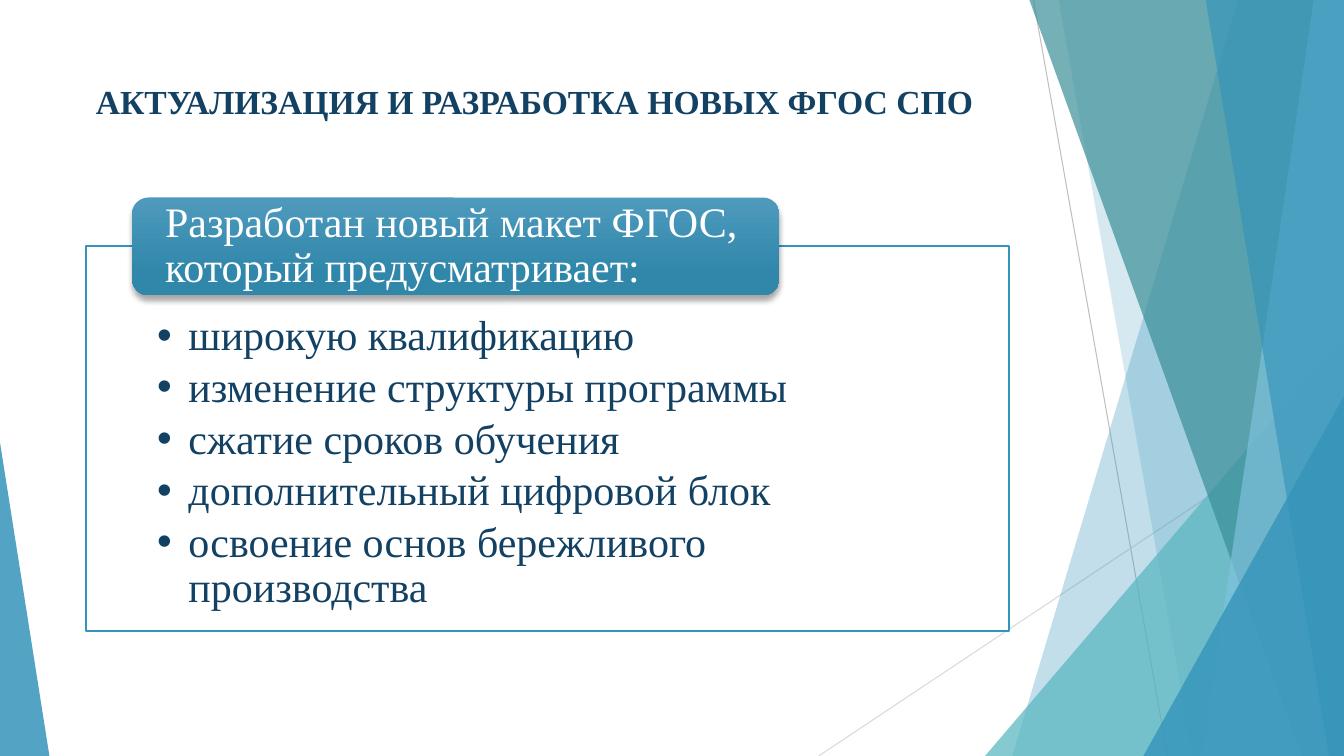
from lxml.etree import SubElement
from pptx import Presentation
from pptx.dml.color import RGBColor
from pptx.enum.shapes import MSO_CONNECTOR, MSO_SHAPE
from pptx.enum.text import MSO_ANCHOR, MSO_AUTO_SIZE, PP_ALIGN
from pptx.oxml.ns import qn
from pptx.util import Pt

PX = 9144  # EMU; 100 px to the inch
W, H = 1333, 750
FONT = "Times New Roman"
COLORS = {
    "navy": "134163", "white": "FFFFFF", "black": "000000",
    "blue": "3494BA", "sky": "7FC1DB", "aqua": "58B6C0", "teal": "3A8F98",
    "gray": "BFBFBF", "pale": "D9D9D9", "top": "4E9ABD", "bottom": "3087AA",
}

TITLE = "АКТУАЛИЗАЦИЯ И РАЗРАБОТКА НОВЫХ ФГОС СПО"
HEADER = "Разработан новый макет ФГОС, который предусматривает:"
ITEMS = [
    "широкую квалификацию",
    "изменение структуры программы",
    "сжатие сроков обучения",
    "дополнительный цифровой блок",
    "освоение основ бережливого производства",
]
TITLE_BOX = (85, 75, 907, 50)
PANEL_BOX = (85, 244, 916, 382)
HEADER_BOX = (131, 196, 642, 97)

# x1, y1, x2, y2, colour
RAYS = [(1025, 0, 1158, H, "gray"), (W, 403, 812, H, "pale")]
# Bands reach the right edge: (top x, bottom x); triangles: (box, apex)
FACETS = [
    ("band", (1228, 1004), "blue", 30),
    ("band", (1050, 1183), "blue", 20),
    ("triangle", ((977, 333, 356, 417), 1), "aqua", 72),
    ("band", (1021, 1291), "teal", 70),
    ("band", (1303, 1192), "sky", 70),
    ("band", (1196, 1318), "blue", 65),
    ("triangle", ((1134, 393, 199, 357), 1), "blue", 80),
    ("triangle", ((0, 439, 49, 311), 0), "blue", 85),
]


def rgb(name):
    return RGBColor.from_string(COLORS[name])


def emu(*lengths):
    return [n * PX for n in lengths]


def fill_solid(sp, color, opacity):
    sp.fill.solid()
    sp.fill.fore_color.rgb = rgb(color)
    clr = sp.fill._xPr.find(qn("a:solidFill"))[0]
    SubElement(clr, qn("a:alpha"), val=str(opacity * 1000))


def add_shape(s, kind, box):
    sp = s.shapes.add_shape(kind, *emu(*box))
    sp.shadow.inherit = False
    sp.line.fill.background()
    return sp


def add_ray(s, x1, y1, x2, y2, color):
    ray = s.shapes.add_connector(MSO_CONNECTOR.STRAIGHT, *emu(x1, y1, x2, y2))
    ray.line.color.rgb = rgb(color)
    ray.line.width = Pt(0.75)
    SubElement(ray._element.spPr, qn("a:effectLst"))


def add_facet(s, kind, geometry, color, opacity):
    if kind == "band":
        top, bottom = geometry
        fb = s.shapes.build_freeform(top, 0, scale=PX)
        fb.add_line_segments([(W, 0), (W, H), (bottom, H)], close=True)
        sp = fb.convert_to_shape()
        sp.shadow.inherit = False
        sp.line.fill.background()
    else:
        box, apex = geometry
        sp = add_shape(s, MSO_SHAPE.ISOSCELES_TRIANGLE, box)
        sp.adjustments[0] = apex
    fill_solid(sp, color, opacity)


def set_frame(tf, insets, anchor):
    tf.margin_left, tf.margin_top, tf.margin_right, tf.margin_bottom = emu(*insets)
    tf.vertical_anchor = anchor
    tf.word_wrap = True


def write(p, text, size, color, bold=False):
    p.alignment = PP_ALIGN.LEFT
    r = p.add_run()
    r.text = text
    r.font.name = FONT
    r.font.size = Pt(size)
    r.font.bold = bold
    r.font.color.rgb = rgb(color)


def add_bullet(p):
    pPr = p._p.get_or_add_pPr()
    indent = 31 * PX
    pPr.set("marL", str(indent))
    pPr.set("indent", str(-indent))
    SubElement(pPr, qn("a:buFont"), typeface="Arial")
    SubElement(pPr, qn("a:buChar"), char="•")


def add_title(s):
    title = s.shapes.title
    title.left, title.top, title.width, title.height = emu(*TITLE_BOX)
    tf = title.text_frame
    set_frame(tf, (10, 5, 10, 5), MSO_ANCHOR.TOP)
    tf.word_wrap = False
    tf.auto_size = MSO_AUTO_SIZE.SHAPE_TO_FIT_TEXT
    write(tf.paragraphs[0], TITLE, 24, "navy", bold=True)


def add_panel(s):
    panel = add_shape(s, MSO_SHAPE.RECTANGLE, PANEL_BOX)
    fill_solid(panel, "white", 90)
    panel.line.color.rgb = rgb("blue")
    panel.line.width = Pt(1.5)
    tf = panel.text_frame
    set_frame(tf, (71, 68, 71, 23), MSO_ANCHOR.TOP)
    for i, item in enumerate(ITEMS):
        p = tf.add_paragraph() if i else tf.paragraphs[0]
        p.line_spacing = 0.9
        p.space_after = Pt(4.5)
        add_bullet(p)
        write(p, item, 30, "navy")


def add_header(s):
    header = add_shape(s, MSO_SHAPE.ROUNDED_RECTANGLE, HEADER_BOX)
    header.fill.gradient()
    header.fill.gradient_angle = 270
    for stop, color, position in zip(header.fill.gradient_stops, ("top", "bottom"), (0, 0.78)):
        stop.color.rgb = rgb(color)
        stop.position = position
    effects = header._element.spPr.find(qn("a:effectLst"))
    shadow = SubElement(effects, qn("a:outerShdw"), blurRad=str(Pt(4)), dist=str(Pt(3)),
                        dir="5400000", rotWithShape="0")
    clr = SubElement(shadow, qn("a:srgbClr"), val=COLORS["black"])
    SubElement(clr, qn("a:alpha"), val="35000")
    tf = header.text_frame
    set_frame(tf, (28, 0, 28, 0), MSO_ANCHOR.MIDDLE)
    p = tf.paragraphs[0]
    p.line_spacing = 0.9
    write(p, HEADER, 30, "white")


def main():
    prs = Presentation()
    prs.slide_width, prs.slide_height = emu(W, H)
    s = prs.slides.add_slide(prs.slide_layouts[5])
    for ray in RAYS:
        add_ray(s, *ray)
    for facet in FACETS:
        add_facet(s, *facet)
    add_title(s)
    add_panel(s)
    add_header(s)
    prs.save("out.pptx")


if __name__ == "__main__":
    main()
